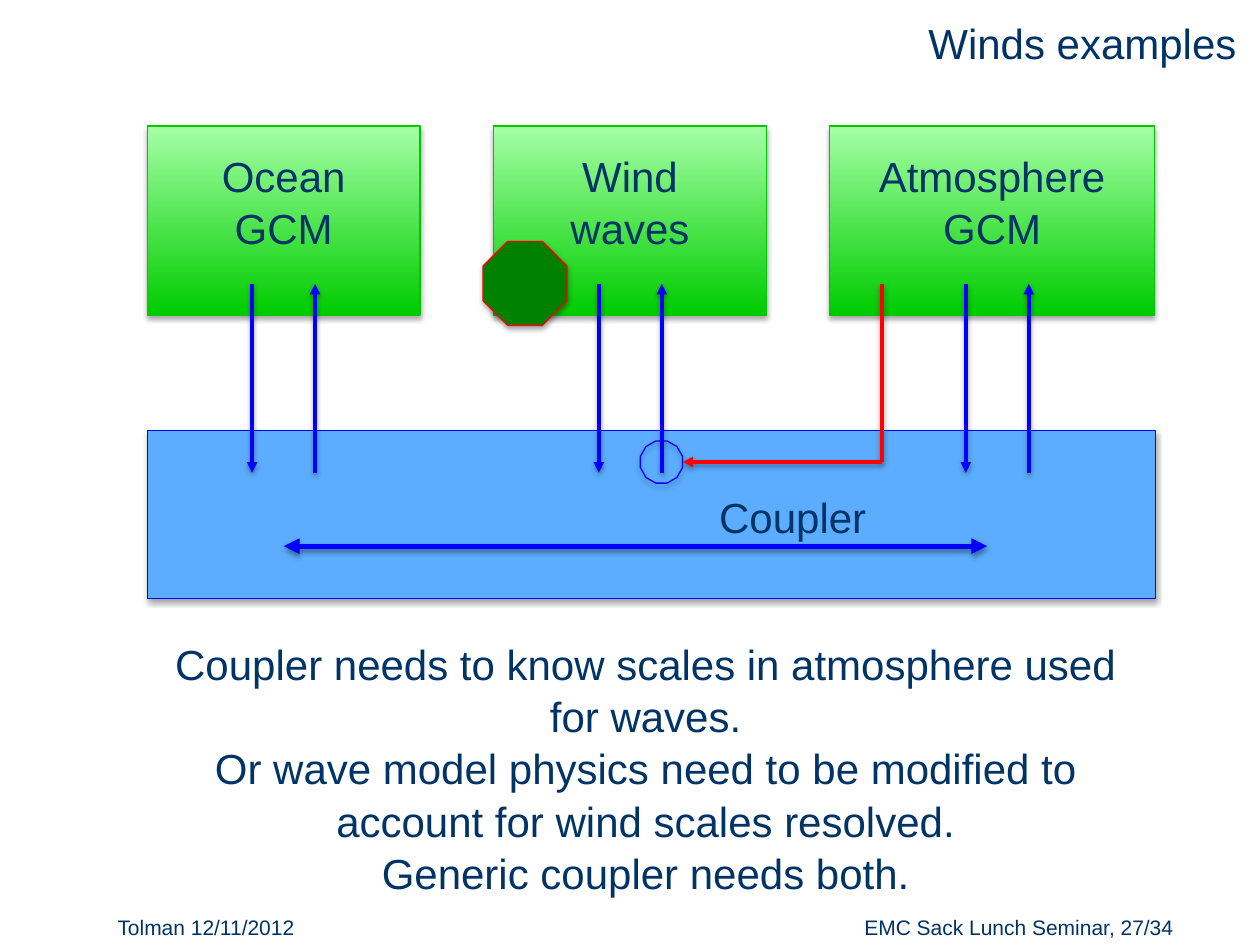
from lxml import etree
from pptx import Presentation
from pptx.dml.color import RGBColor
from pptx.enum.shapes import MSO_CONNECTOR, MSO_SHAPE
from pptx.enum.text import MSO_ANCHOR, PP_ALIGN
from pptx.oxml.ns import qn
from pptx.util import Cm, Pt

LEFT, MID, RIGHT = PP_ALIGN.LEFT, PP_ALIGN.CENTER, PP_ALIGN.RIGHT
RECT, RING, STOP = MSO_SHAPE.RECTANGLE, MSO_SHAPE.DODECAGON, MSO_SHAPE.OCTAGON
HEX = {"ink": "003366", "blue": "0000FF", "red": "FF0000", "sky": "5CADFF",
       "low": "00CC00", "high": "A5FFA5", "edge": "00C800", "dark": "008000"}

TITLE = "Winds examples"
MODELS = [
    ("Ocean GCM", 2.97, 5.5, 5.08),
    ("Wind waves", 9.95, 5.5, 12.07),
    ("Atmosphere GCM", 16.72, 6.56, 19.47),
]
NOTES = [
    "Coupler needs to know scales in atmosphere used for waves.",
    "Or wave model physics need to be modified to account for wind scales resolved.",
    "Generic coupler needs both.",
]
TEXTS = [
    (["Coupler"], (11.85, 9.74, 8.26, 1.27), 24, MID),
    (NOTES, (2.75, 12.7, 20.53, 5.38), 24, MID),
    (["Tolman 12/11/2012"], (2.12, 18.29, 7.62, 0.76), 12, LEFT),
    (["EMC Sack Lunch Seminar, 27/34"], (15.45, 18.29, 8.46, 0.76), 12, RIGHT),
]
TOP, TALL = 2.54, 3.81
START, END, GAP = 5.72, 9.53, 1.27
BEND = (17.78, 9.31)


def tone(name):
    return RGBColor.from_string(HEX[name])


def shade(shape, alpha, dist):
    props = shape._element.spPr
    for old in props.findall(qn("a:effectLst")):
        props.remove(old)
    glow = etree.SubElement(props, qn("a:effectLst"))
    drop = etree.SubElement(glow, qn("a:outerShdw"), blurRad=str(Pt(3.1)),
                            dist=str(Pt(dist)), dir="5400000", rotWithShape="0")
    color = etree.SubElement(drop, qn("a:srgbClr"), val="000000")
    etree.SubElement(color, qn("a:alpha"), val=str(alpha * 1000))


def block(slide, kind, box, line, fill=None):
    shape = slide.shapes.add_shape(kind, *map(Cm, box))
    if fill is None:
        shape.fill.background()
    elif isinstance(fill, tuple):
        shape.fill.gradient()
        shape.fill.gradient_angle = 90
        for stop, name in zip(shape.fill.gradient_stops, fill):
            stop.color.rgb = tone(name)
            stop.position = float(fill.index(name))
    else:
        shape.fill.solid()
        shape.fill.fore_color.rgb = tone(fill)
    shape.line.color.rgb = tone(line)
    shape.line.width = Pt(0.75)
    shade(shape, 35, 1.8)


def arrow(slide, start, end, color="blue", width=2, ends=("tailEnd",)):
    line = slide.shapes.add_connector(
        MSO_CONNECTOR.STRAIGHT, *map(Cm, start + end))
    line.line.color.rgb = tone(color)
    line.line.width = Pt(width)
    for tip in ends:
        etree.SubElement(line.line._get_or_add_ln(), qn("a:" + tip), type="triangle")
    shade(line, 38, 1.6)


def write(frame, lines, size, align):
    frame.word_wrap = True
    frame.text = "\n".join(lines)
    for para in frame.paragraphs:
        para.alignment = align
        para.line_spacing = 1.04
        for run in para.runs:
            run.font.size = Pt(size)
            run.font.name = "Arial"
            run.font.color.rgb = tone("ink")


def label(slide, lines, box, size, align):
    text = slide.shapes.add_textbox(*map(Cm, box))
    write(text.text_frame, lines, size, align)


def main():
    deck = Presentation()
    deck.slide_width, deck.slide_height = Cm(25.4), Cm(19.05)
    slide = deck.slides.add_slide(deck.slide_layouts[5])

    title = slide.shapes.title
    title.left, title.top, title.width, title.height = map(
        Cm, (10.37, 0.21, 14.81, 1.27))
    write(title.text_frame, [TITLE], 24, RIGHT)
    title.text_frame.vertical_anchor = MSO_ANCHOR.MIDDLE

    block(slide, RECT, (2.97, 8.68, 20.32, 3.39), "blue", "sky")
    for name, left, wide, x in MODELS:
        block(slide, RECT, (left, TOP, wide, TALL), "edge", ("low", "high"))
        label(slide, [name], (left + 0.42, 2.87, wide - 0.84, 2.31), 24, MID)
        arrow(slide, (x, START), (x, END))
        arrow(slide, (x + GAP, END), (x + GAP, START))

    for item in TEXTS:
        label(slide, *item)
    arrow(slide, (5.72, 11.01), (19.9, 11.01), width=3, ends=("headEnd", "tailEnd"))
    block(slide, RING, (12.91, 8.89, 0.85, 0.85), "blue")
    arrow(slide, (BEND[0], START), BEND, "red", ends=())
    arrow(slide, BEND, (13.76, BEND[1]), "red")
    block(slide, STOP, (9.74, 4.87, 1.69, 1.69), "red", "dark")
    deck.save("out.pptx")


if __name__ == "__main__":
    main()
